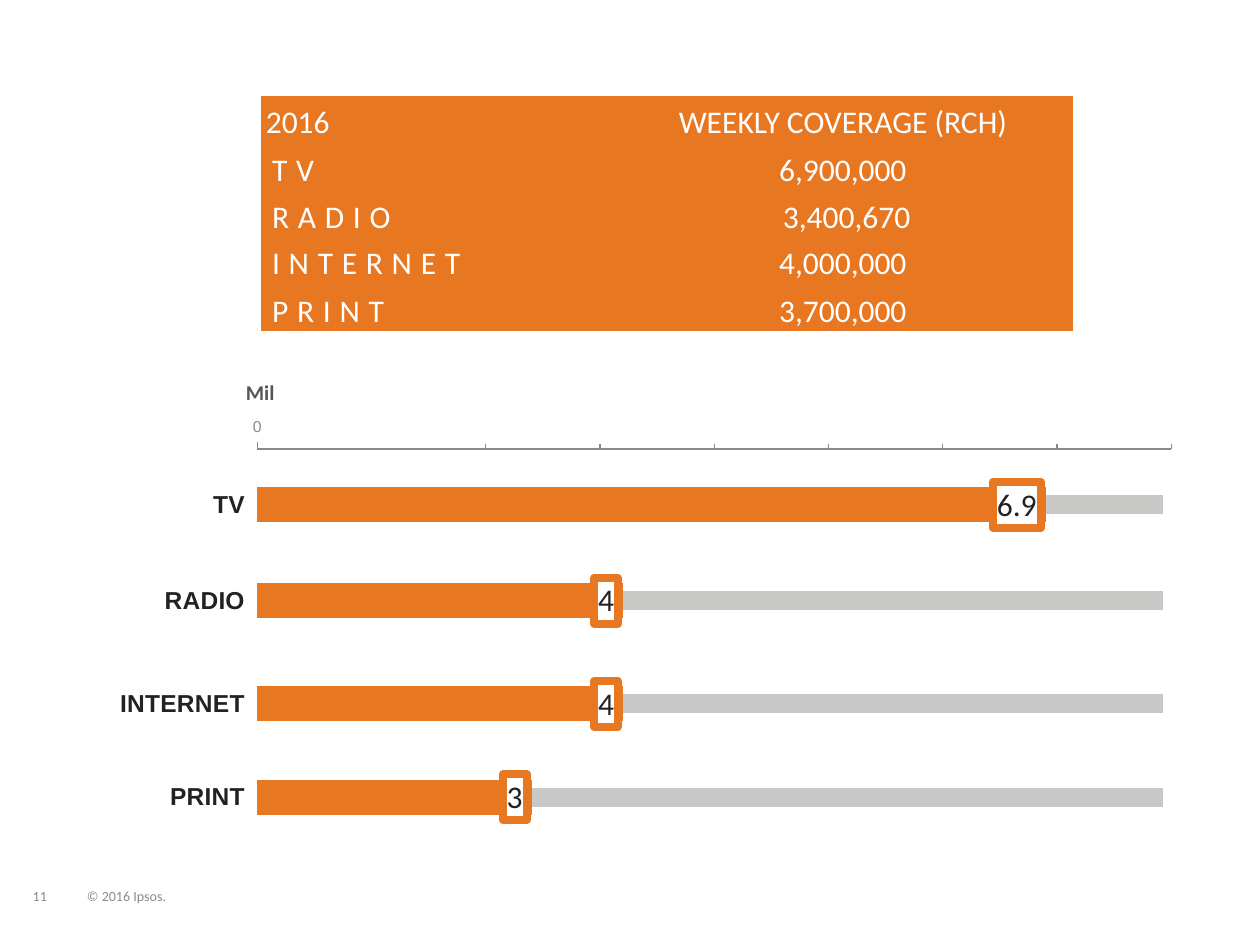
import pptx
import pptx.chart.data
import pptx.dml.color
import pptx.enum.chart
import pptx.enum.text
import pptx.oxml
import pptx.oxml.ns
import pptx.util

COLORS = {"orange": "E87722", "track": "C8C9C7", "white": "FFFFFF",
          "ink": "222223", "muted": "888B8D", "unit": "555555"}
UNIT = 0.1  # grid step in inches: the slide is 100 columns by 75 rows
NO_TABLE_STYLE = "{2D5ABB26-0587-4C30-8999-92F81FD0307C}"
PLOT_SHARES = {"x": 0.203, "y": 0.281, "w": 0.766, "h": 0.646}

COVERAGE = [("2016", "WEEKLY COVERAGE (RCH)"), ("TV", "6,900,000"),
            ("RADIO", "3,400,670"), ("INTERNET", "4,000,000"), ("PRINT", "3,700,000")]
ROW_HEIGHTS = [3.7, 3.8, 3.7, 3.7, 3.8]
BARS = [("PRINT", 3, 55), ("INTERNET", 4, 47.6), ("RADIO", 4, 39.4), ("TV", 6.9, 31.8)]

ALIGN = pptx.enum.text.PP_ALIGN
ANCHOR = pptx.enum.text.MSO_ANCHOR
TICK = pptx.enum.chart.XL_TICK_MARK


def rgb(name):
    return pptx.dml.color.RGBColor.from_string(COLORS[name])


def grid(*steps):
    return [pptx.util.Inches(step * UNIT) for step in steps]


def xml(tag, body):
    namespaces = pptx.oxml.ns.nsdecls("c", "a")
    return pptx.oxml.parse_xml(f"<{tag} {namespaces}>{body}</{tag}>")


def format_font(font, size, color, name="Calibri", bold=False):
    font.size, font.name, font.bold = pptx.util.Pt(size), name, bold
    font.color.rgb = rgb(color)


def write(frame, text, size=18, color="white", bold=False, align=ALIGN.LEFT,
          anchor=ANCHOR.BOTTOM, margin=0, spacing=0, indent=0, line_spacing=None):
    """Put one formatted paragraph into a text frame; indent is in grid steps."""
    frame.margin_left = frame.margin_right = frame.margin_top = pptx.util.Inches(margin)
    frame.margin_bottom = 0
    frame.vertical_anchor = anchor
    paragraph = frame.paragraphs[0]
    paragraph.alignment, paragraph.line_spacing = align, line_spacing
    if indent:
        properties = paragraph._p.get_or_add_pPr()
        properties.set("marL", str(grid(indent)[0]))
        properties.set("indent", "0")
    run = paragraph.add_run()
    run.text = text
    format_font(run.font, size, color, bold=bold)
    if spacing:
        run._r.get_or_add_rPr().set("spc", str(spacing * 100))


class Deck:
    def __init__(self):
        self.presentation = pptx.Presentation()
        self.presentation.slide_width, self.presentation.slide_height = grid(100, 75)
        self.slide = self.presentation.slides.add_slide(self.presentation.slide_layouts[6])

    def label(self, text, box, **style):
        frame = self.slide.shapes.add_textbox(*grid(*box)).text_frame
        frame.word_wrap = False
        write(frame, text, **style)

    def coverage_table(self, box, widths):
        shape = self.slide.shapes.add_table(len(COVERAGE), len(widths), *grid(*box))
        table = shape.table
        table.first_row = table.horz_banding = False
        table._tbl.tblPr.find(pptx.oxml.ns.qn("a:tableStyleId")).text = NO_TABLE_STYLE
        for column, width in zip(table.columns, grid(*widths)):
            column.width = width
        for index, (medium, reach) in enumerate(COVERAGE):
            table.rows[index].height = grid(ROW_HEIGHTS[index])[0]
            medium_style = {"spacing": 5, "indent": 0.8} if index else {"indent": 0.3}
            reach_style = {"align": ALIGN.CENTER, "indent": 0.6 if medium == "RADIO" else 0}
            for column, (text, style) in enumerate([(medium, medium_style),
                                                    (reach, reach_style)]):
                cell = table.cell(index, column)
                cell.fill.solid()
                cell.fill.fore_color.rgb = rgb("orange")
                write(cell.text_frame, text, margin=0.01, **style)
                cell.vertical_anchor = ANCHOR.BOTTOM
                cell.margin_left = cell.margin_right = cell.margin_top = pptx.util.Inches(0.01)
                cell.margin_bottom = 0

    def bar(self, medium, value, box, scale=False):
        """One value bar over a full-width track, with the value axis if scale is set."""
        data = pptx.chart.data.CategoryChartData()
        data.categories = [medium]
        data.add_series("Series 1", [100])
        data.add_series("Series 2", [value])
        kind = pptx.enum.chart.XL_CHART_TYPE.BAR_CLUSTERED
        chart = self.slide.shapes.add_chart(kind, *grid(*box), data).chart
        chart.has_legend = chart.has_title = False
        format_font(chart.font, 18, "ink")
        text_properties = chart._chartSpace.find(pptx.oxml.ns.qn("c:txPr"))
        text_properties.addprevious(xml("c:spPr", "<a:noFill/><a:ln><a:noFill/></a:ln>"))
        self.place_plot(chart)

        plot = chart.plots[0]
        plot.gap_width, plot.overlap, plot.vary_by_categories = 220, 100, False
        for series, color in zip(plot.series, ("track", "orange")):
            series.format.fill.solid()
            series.format.fill.fore_color.rgb = rgb(color)
        track, amount = plot.series
        track.format.line.color.rgb = rgb("white")
        track.format.line.width = pptx.util.Pt(9)
        self.box_value(amount.data_labels, "General" if scale else "#,##0")

        categories = chart.category_axis
        categories.reverse_order = True
        categories.has_major_gridlines = False
        categories.major_tick_mark = TICK.OUTSIDE
        categories.format.line.fill.background()
        format_font(categories.tick_labels.font, 14, "ink", "Arial", True)

        values = chart.value_axis
        values.minimum_scale, values.maximum_scale = 0, 8 if scale else 10
        values.major_unit = 10
        values.has_major_gridlines = False
        values.visible = scale
        if scale:
            values.minor_unit = 1
            values.major_tick_mark = values.minor_tick_mark = TICK.OUTSIDE
            values.format.line.color.rgb = rgb("muted")
            format_font(values.tick_labels.font, 9, "muted", "Arial")

    def place_plot(self, chart):
        area = chart._chartSpace.chart.plotArea
        for layout in area.findall(pptx.oxml.ns.qn("c:layout")):
            area.remove(layout)
        modes = '<c:layoutTarget val="inner"/><c:xMode val="edge"/><c:yMode val="edge"/>'
        shares = "".join(f'<c:{key} val="{share}"/>' for key, share in PLOT_SHARES.items())
        area.insert(0, xml("c:layout", f"<c:manualLayout>{modes}{shares}</c:manualLayout>"))

    def box_value(self, labels, number_format):
        """Show the value in a white box with a thick round-cornered outline."""
        labels.show_value = True
        labels.number_format, labels.number_format_is_linked = number_format, False
        labels.position = pptx.enum.chart.XL_LABEL_POSITION.INSIDE_END
        format_font(labels.font, 18, "ink")
        fill, line = (f'<a:solidFill><a:srgbClr val="{COLORS[name]}"/></a:solidFill>'
                      for name in ("white", "orange"))
        outline = f'<a:ln w="{pptx.util.Pt(4.5)}">{line}<a:round/></a:ln>'
        number = labels._element.find(pptx.oxml.ns.qn("c:numFmt"))
        number.addnext(xml("c:spPr", fill + outline))


def main():
    deck = Deck()
    footer = {"size": 8, "color": "muted", "line_spacing": 0.85}
    deck.label("11", (2.6, 68.3, 3.4, 3.5), **footer)
    deck.label("© 2016 Ipsos.", (6.9, 69.3, 7.6, 2.5), **footer)
    deck.coverage_table((20.7, 7.6, 64.5, 18.6), (27.9, 36.6))
    for medium, value, top in BARS:
        deck.bar(medium, value, (1.2, top, 94.7, 13.7), scale=medium == "TV")
    deck.label("Mil", (15.7, 30.1, 9.9, 3.1), size=12, color="unit", bold=True,
               align=ALIGN.CENTER, anchor=ANCHOR.TOP)
    deck.presentation.save("out.pptx")


if __name__ == "__main__":
    main()
